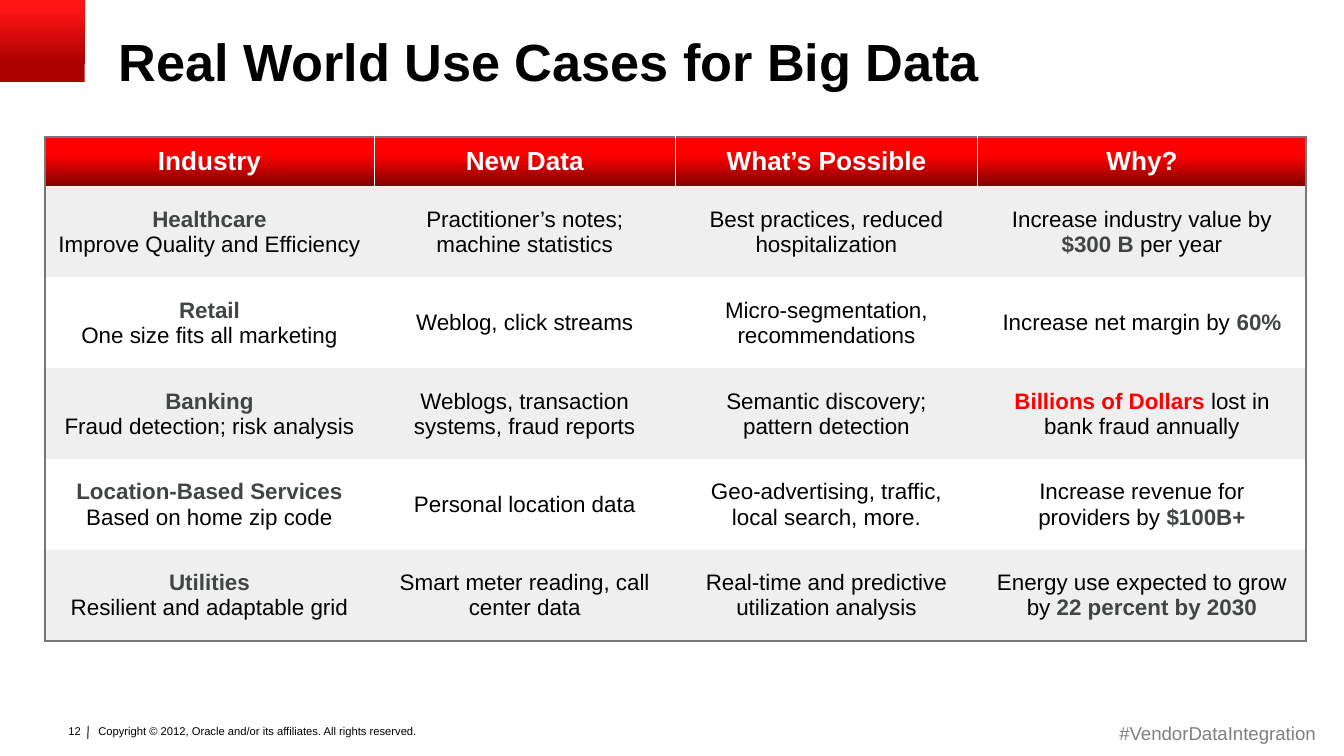
from typing import NamedTuple

import lxml.etree
import pptx
import pptx.dml.color
import pptx.dml.fill
import pptx.enum.shapes
import pptx.enum.text
import pptx.oxml.ns
import pptx.slide
import pptx.table
import pptx.text.text
import pptx.util

Pt = pptx.util.Pt
Align = pptx.enum.text.PP_ALIGN
qn = pptx.oxml.ns.qn

FONT = "Arial"
COLOURS = {
    "black": "000000", "white": "FFFFFF", "red": "FF0000", "slate": "424545",
    "hashtag": "808080", "frame": "777777", "band": "D9D9D9",
    "header dark": "800000", "corner dark": "AA0000", "corner light": "FF1414",
}
COLUMN_WIDTHS = (176.5, 161.3, 162, 176)
HEADER_HEIGHT = 25.7
ROW_HEIGHT = 48.75


class Phrase(NamedTuple):
    text: str
    colour: str = "black"
    bold: bool = False
    italic: bool = False


class UseCase(NamedTuple):
    industry: str
    need: str
    new_data: str
    possible: str
    reason: tuple[Phrase, ...]


class Label(NamedTuple):
    left: float
    top: float
    width: float
    height: float
    size: float
    phrases: tuple[Phrase, ...]
    align: Align = Align.LEFT
    insets: tuple[float, float] = (3, 1.5)
    line_spacing: float = 1.0


HEADINGS = ("Industry", "New Data", "What’s Possible", "Why?")
USE_CASES = (
    UseCase("Healthcare", "Improve Quality and Efficiency",
            "Practitioner’s notes; machine statistics",
            "Best practices, reduced hospitalization",
            (Phrase("Increase industry value by "), Phrase("$300 B ", "slate", True),
             Phrase("per year"))),
    UseCase("Retail", "One size fits all marketing", "Weblog, click streams",
            "Micro-segmentation, recommendations",
            (Phrase("Increase net margin by "), Phrase("60%", "slate", True))),
    UseCase("Banking", "Fraud detection; risk analysis",
            "Weblogs, transaction systems, fraud reports",
            "Semantic discovery; pattern detection",
            (Phrase("Billions of Dollars ", "red", True),
             Phrase("lost in bank fraud annually"))),
    UseCase("Location-Based Services", "Based on home zip code",
            "Personal location data", "Geo-advertising, traffic, local search, more.",
            (Phrase("Increase revenue for providers by "),
             Phrase("$100B+", "slate", True))),
    UseCase("Utilities", "Resilient and adaptable grid",
            "Smart meter reading, call center data",
            "Real-time and predictive utilization analysis",
            (Phrase("Energy use expected to grow by "),
             Phrase("22 percent by 2030", "slate", True))),
)
LABELS = (
    Label(49.7, 386.6, 197.3, 17.3, 6,
          (Phrase("Copyright © 2012, Oracle and/or its affiliates. All rights reserved."),)),
    Label(530, 385.2, 177.8, 17.3, 10,
          (Phrase("#", "hashtag", italic=True), Phrase("VendorDataIntegration", "hashtag")),
          Align.RIGHT),
    Label(28, 384.5, 22.3, 14.4, 6, (Phrase("12"),), Align.RIGHT, (7.2, 3.6)),
    Label(63.4, 19.4, 648, 60.5, 28,
          (Phrase("Real World Use Cases for Big Data", bold=True),),
          insets=(0, 0), line_spacing=0.9),
)


def rgb(name: str) -> pptx.dml.color.RGBColor:
    return pptx.dml.color.RGBColor.from_string(COLOURS[name])


def write_phrases(paragraph: pptx.text.text._Paragraph, phrases: tuple[Phrase, ...],
                  size: float, align: Align) -> None:
    """Write styled runs; a phrase ending in a newline is followed by a line break."""
    paragraph.alignment = align
    for phrase in phrases:
        run = paragraph.add_run()
        run.text = phrase.text.rstrip("\n")
        run.font.name, run.font.size = FONT, Pt(size)
        run.font.bold, run.font.italic = phrase.bold, phrase.italic
        run.font.color.rgb = rgb(phrase.colour)
        if phrase.text.endswith("\n"):
            paragraph.add_line_break()


def fill_upward(fill: pptx.dml.fill.FillFormat, stops: tuple[tuple[float, str], ...]) -> None:
    """Apply a gradient running from bottom to top."""
    fill.gradient()
    fill.gradient_angle = 90
    for stop, (position, colour) in zip(fill.gradient_stops, stops):
        stop.position = position
        stop.color.rgb = rgb(colour)


def add_label(slide: pptx.slide.Slide, label: Label) -> None:
    box = slide.shapes.add_textbox(Pt(label.left), Pt(label.top),
                                   Pt(label.width), Pt(label.height))
    frame = box.text_frame
    frame.word_wrap = True
    frame.margin_left = frame.margin_right = Pt(label.insets[0])
    frame.margin_top = frame.margin_bottom = Pt(label.insets[1])
    paragraph = frame.paragraphs[0]
    paragraph.line_spacing = label.line_spacing
    write_phrases(paragraph, label.phrases, label.size, label.align)


def add_corner(slide: pptx.slide.Slide) -> None:
    corner = slide.shapes.add_shape(pptx.enum.shapes.MSO_SHAPE.RECTANGLE,
                                    Pt(0), Pt(0), Pt(45.4), Pt(44))
    corner.shadow.inherit = False
    corner.line.fill.background()
    fill_upward(corner.fill, ((0.2, "corner dark"), (0.9, "corner light")))


def add_footer_divider(slide: pptx.slide.Slide) -> None:
    divider = slide.shapes.add_connector(pptx.enum.shapes.MSO_CONNECTOR.STRAIGHT,
                                         Pt(47.3), Pt(388.8), Pt(47), Pt(396))
    divider.line.color.rgb = rgb("black")
    divider.line.width = Pt(0.5)
    lxml.etree.SubElement(divider._element.spPr, qn("a:effectLst"))


def set_borders(cell: pptx.table._Cell, row: int, column: int) -> None:
    """Frame the table in grey, divide the headings in white, hide other edges."""
    frame, divider = ("frame", 1.5), ("white", 0.75) if row == 0 else None
    edges = {
        "L": frame if column == 0 else divider,
        "R": frame if column == len(HEADINGS) - 1 else divider,
        "T": frame if row == 0 else None,
        "B": frame if row == len(USE_CASES) else None,
    }
    properties = cell._tc.get_or_add_tcPr()
    for side, edge in edges.items():
        line = lxml.etree.SubElement(properties, qn(f"a:ln{side}"))
        if edge is None:
            lxml.etree.SubElement(line, qn("a:noFill"))
            continue
        colour, width = edge
        line.set("w", str(Pt(width)))
        solid = lxml.etree.SubElement(line, qn("a:solidFill"))
        lxml.etree.SubElement(solid, qn("a:srgbClr"), val=COLOURS[colour])


def fill_cell(cell: pptx.table._Cell, row: int) -> None:
    if row == 0:
        fill_upward(cell.fill, ((0, "header dark"), (0.64, "red")))
        return
    cell.fill.solid()
    cell.fill.fore_color.rgb = rgb("band" if row % 2 else "white")
    if row % 2:
        band = cell._tc.tcPr.find(qn("a:solidFill"))[0]
        lxml.etree.SubElement(band, qn("a:alpha"), val="40000")


def add_use_case_table(slide: pptx.slide.Slide) -> None:
    contents = [[(Phrase(heading, "white", True),) for heading in HEADINGS]]
    for case in USE_CASES:
        contents.append([(Phrase(case.industry + "\n", "slate", True), Phrase(case.need)),
                         (Phrase(case.new_data),), (Phrase(case.possible),), case.reason])
    heights = [HEADER_HEIGHT] + [ROW_HEIGHT] * len(USE_CASES)
    table = slide.shapes.add_table(len(contents), len(HEADINGS), Pt(24), Pt(73.4),
                                   Pt(sum(COLUMN_WIDTHS)), Pt(sum(heights))).table
    for column, width in zip(table.columns, COLUMN_WIDTHS):
        column.width = Pt(width)
    for row, (height, row_contents) in enumerate(zip(heights, contents)):
        table.rows[row].height = Pt(height)
        for column, phrases in enumerate(row_contents):
            cell = table.cell(row, column)
            cell.vertical_anchor = pptx.enum.text.MSO_ANCHOR.MIDDLE
            cell.margin_left = cell.margin_right = Pt(7.2)
            cell.margin_top = cell.margin_bottom = Pt(4.8)
            set_borders(cell, row, column)
            fill_cell(cell, row)
            write_phrases(cell.text_frame.paragraphs[0], phrases,
                          12 if row else 14, Align.CENTER)


def main() -> None:
    presentation = pptx.Presentation()
    presentation.slide_width, presentation.slide_height = Pt(720), Pt(405)
    slide = presentation.slides.add_slide(presentation.slide_layouts[6])
    add_corner(slide)
    add_footer_divider(slide)
    for label in LABELS:
        add_label(slide, label)
    add_use_case_table(slide)
    presentation.save("out.pptx")


if __name__ == "__main__":
    main()
